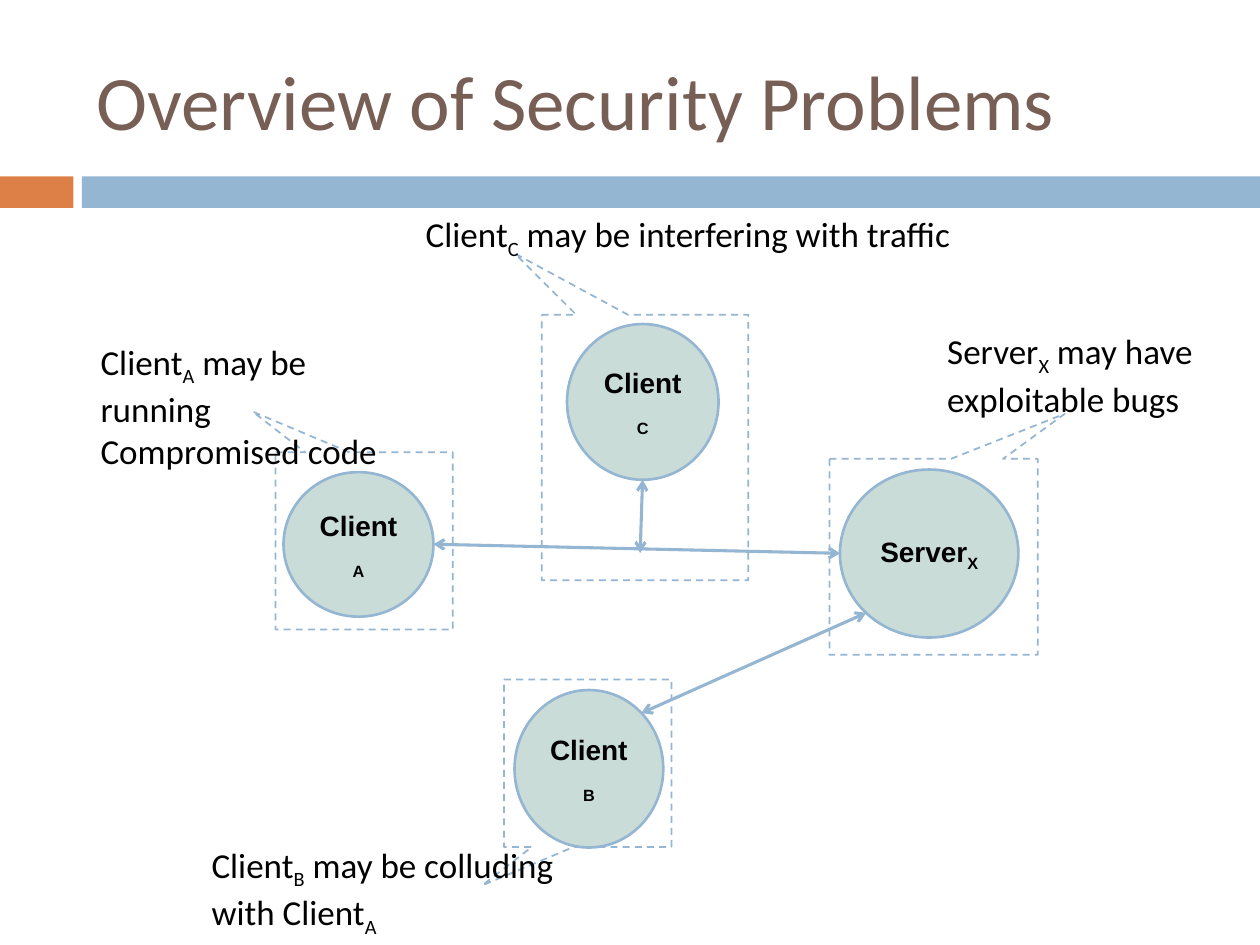
from dataclasses import dataclass

from lxml import etree
from pptx import Presentation
from pptx.dml.color import RGBColor
from pptx.enum.dml import MSO_LINE
from pptx.enum.shapes import MSO_CONNECTOR, MSO_SHAPE
from pptx.enum.text import MSO_ANCHOR, PP_ALIGN
from pptx.oxml.ns import qn
from pptx.util import Pt

RECTANGLE = MSO_SHAPE.RECTANGLE
OVAL = MSO_SHAPE.OVAL
CALLOUT = MSO_SHAPE.RECTANGULAR_CALLOUT
STRAIGHT = MSO_CONNECTOR.STRAIGHT
DASH = MSO_LINE.DASH
TOP, MIDDLE = MSO_ANCHOR.TOP, MSO_ANCHOR.MIDDLE
LEFT, CENTER = PP_ALIGN.LEFT, PP_ALIGN.CENTER


@dataclass(frozen=True)
class Theme:
    accent: RGBColor = RGBColor(0xDD, 0x80, 0x47)
    blue: RGBColor = RGBColor(0x94, 0xB6, 0xD2)
    node: RGBColor = RGBColor(0xCA, 0xDC, 0xD8)
    title: RGBColor = RGBColor(0x77, 0x5F, 0x55)
    text: RGBColor = RGBColor(0, 0, 0)
    body_font: str = "Calibri"
    node_font: str = "Arial"
    title_size: int = 44
    label_size: int = 20
    node_size: int = 16


class SlideBuilder:
    def __init__(self, slide, theme):
        self.slide = slide
        self.theme = theme

    def shape(self, kind, box, fill=None, line_width=None):
        shape = self.slide.shapes.add_shape(kind, *map(Pt, box))
        shape.shadow.inherit = False
        if fill is None:
            shape.fill.background()
        else:
            shape.fill.solid()
            shape.fill.fore_color.rgb = fill
        if line_width is None:
            shape.line.fill.background()
        else:
            shape.line.color.rgb = self.theme.blue
            shape.line.width = Pt(line_width)
        return shape

    def set_lines(self, frame, lines, font, size, color, bold=False, align=LEFT):
        for index, line in enumerate(lines):
            paragraph = frame.add_paragraph() if index else frame.paragraphs[0]
            paragraph.alignment = align
            paragraph.font.name = font
            paragraph.font.size = Pt(size)
            paragraph.font.bold = bold
            paragraph.font.color.rgb = color
            base, *marked = line.split("_")
            paragraph.add_run().text = base
            for piece in marked:
                subscript = paragraph.add_run()
                subscript.text = piece[0]
                subscript.font._element.set("baseline", "-25000")
                if piece[1:]:
                    paragraph.add_run().text = piece[1:]

    def bar(self, box, color):
        self.shape(RECTANGLE, box, color)

    def node(self, box, name):
        frame = self.shape(OVAL, box, self.theme.node, 1.5).text_frame
        frame.word_wrap = True
        frame.vertical_anchor = MIDDLE
        self.set_lines(frame, [name], self.theme.node_font, self.theme.node_size,
                       self.theme.text, True, CENTER)

    def callout(self, box, side, level):
        shape = self.shape(CALLOUT, box, line_width=1)
        shape.line.dash_style = DASH
        shape.adjustments[0] = 0.63 * side
        shape.adjustments[1] = 0.73 * level

    def link(self, start, end):
        connector = self.slide.shapes.add_connector(STRAIGHT, *map(Pt, start + end))
        connector.line.color.rgb = self.theme.blue
        connector.line.width = Pt(1.75)
        properties = connector._element.spPr
        line = properties.find(qn("a:ln"))
        for tag in ("a:headEnd", "a:tailEnd"):
            etree.SubElement(line, qn(tag), type="arrow")
        etree.SubElement(properties, qn("a:effectLst"))

    def text(self, box, lines, size, color, wrap=False, anchor=TOP):
        frame = self.slide.shapes.add_textbox(*map(Pt, box)).text_frame
        frame.word_wrap = wrap
        frame.vertical_anchor = anchor
        self.set_lines(frame, lines, self.theme.body_font, size, color)

    def label(self, box, lines, wrap=False):
        self.text(box, lines, self.theme.label_size, self.theme.text, wrap)

    def title(self, box, line):
        self.text(box, [line], self.theme.title_size, self.theme.title, True, MIDDLE)


def main():
    presentation = Presentation()
    presentation.slide_width, presentation.slide_height = Pt(720), Pt(540)
    slide = presentation.slides.add_slide(presentation.slide_layouts[6])
    theme = Theme()
    builder = SlideBuilder(slide, theme)

    builder.bar((0, 100.8, 42, 18), theme.accent)
    builder.bar((46.8, 100.8, 673.2, 18), theme.blue)

    builder.node((480, 268.3, 102, 96), "Server_X")
    builder.node((294, 394.3, 85, 90), "Client_B")
    builder.node((162, 269.8, 85.7, 82.6), "Client_A")
    builder.node((324, 185.2, 86.6, 89), "Client_C")

    builder.link((247.7, 311), (480, 316.2))
    builder.link((366.5, 407.5), (495, 350.2))
    builder.link((367.2, 274.2), (365.8, 316))

    builder.callout((309.6, 179.8, 118, 151.8), -1, -1)
    builder.callout((157.5, 258.5, 101.3, 101.3), -1, -1)
    builder.callout((474, 262.2, 119, 112), 1, -1)
    builder.callout((288, 388.3, 95.7, 95.7), -1, 1)

    builder.label((236.2, 118, 316, 32), ["Client_C may be interfering with traffic"])
    builder.label((50.4, 190.8, 196, 55.4),
                  ["Client_A may be running", "Compromised code"], wrap=True)
    builder.label((113.8, 478.2, 210, 55.4),
                  ["Client_B may be colluding", "with Client_A"])
    builder.label((534.2, 185, 159, 55.4), ["Server_X may have", "exploitable bugs"])
    builder.title((48, 18, 642, 78), "Overview of Security Problems")

    presentation.save("out.pptx")


if __name__ == "__main__":
    main()
